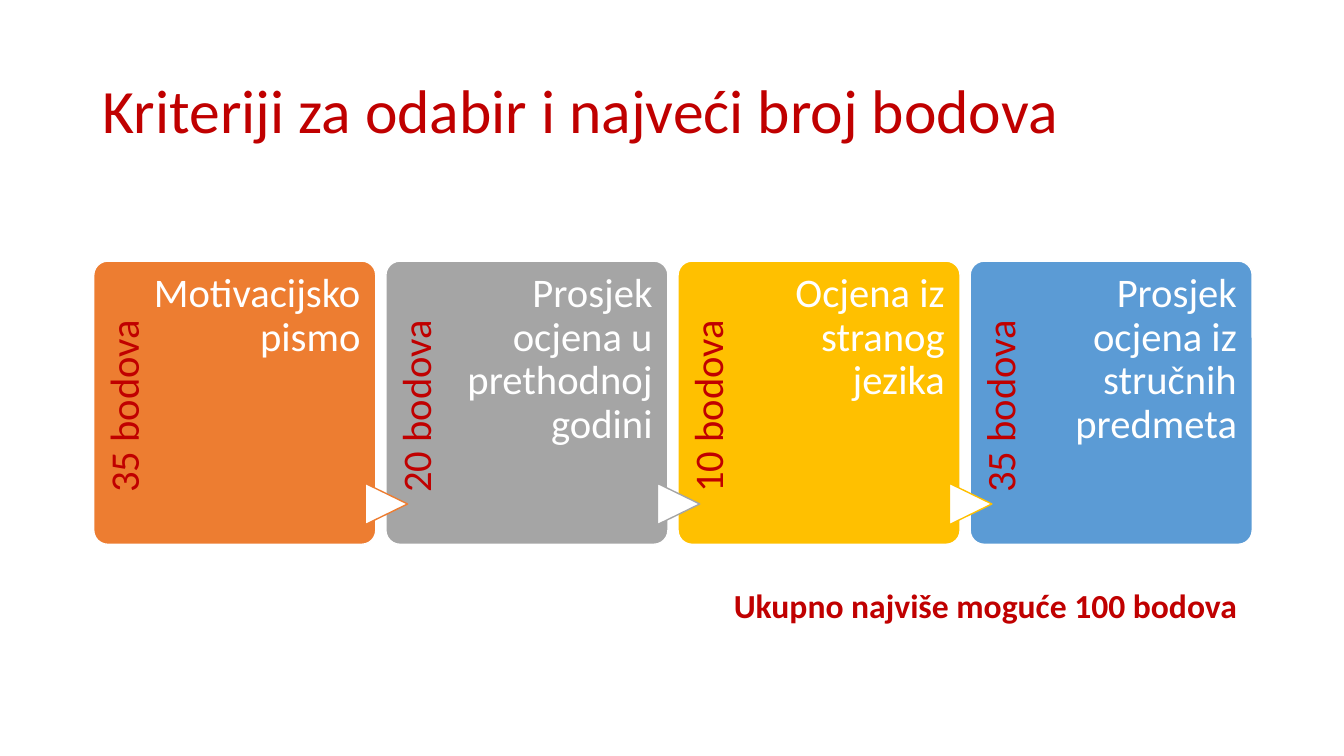
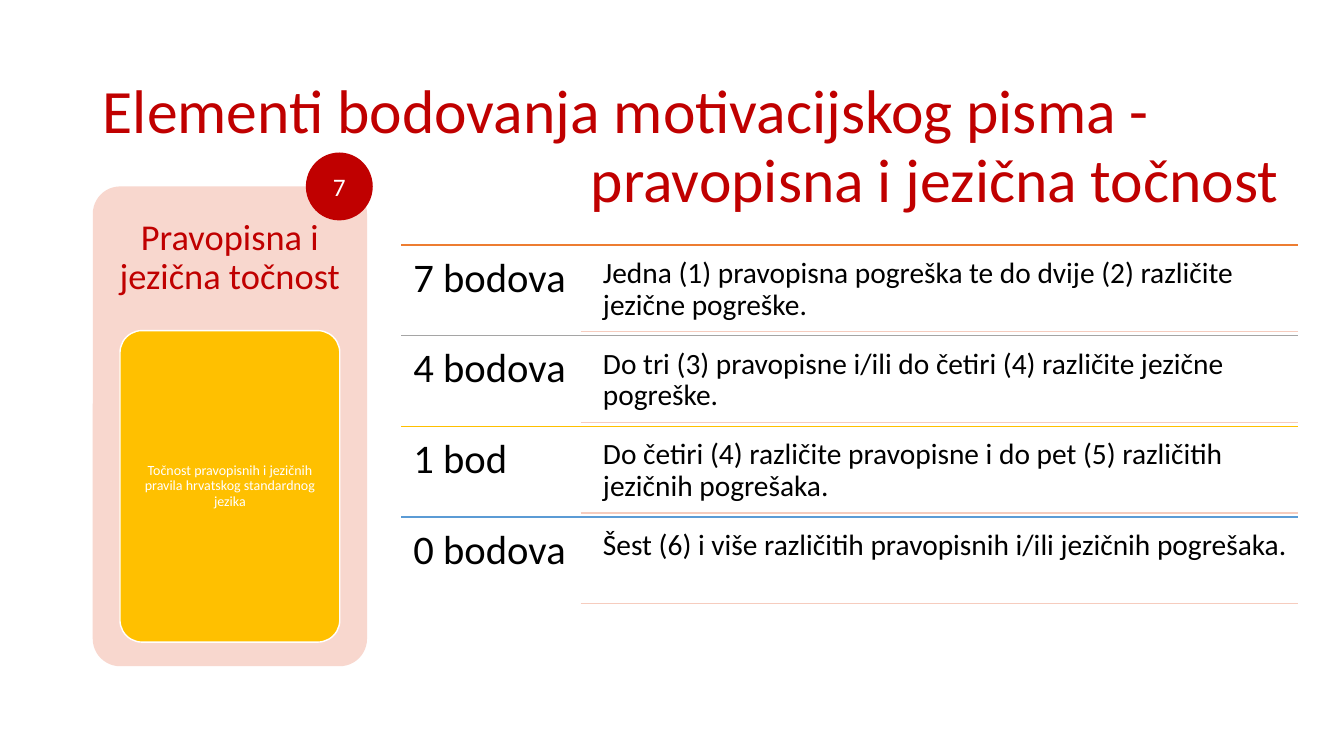
from dataclasses import dataclass

from lxml import etree
from pptx import Presentation
from pptx.dml.color import RGBColor
from pptx.enum.shapes import MSO_CONNECTOR, MSO_SHAPE
from pptx.enum.text import MSO_ANCHOR, MSO_AUTO_SIZE, PP_ALIGN
from pptx.oxml.ns import qn
from pptx.util import Inches, Pt

ROUND = MSO_SHAPE.ROUNDED_RECTANGLE
ARROW = MSO_SHAPE.FLOWCHART_EXTRACT
OVAL = MSO_SHAPE.OVAL
STRAIGHT = MSO_CONNECTOR.STRAIGHT
LEFT, CENTER, RIGHT = PP_ALIGN.LEFT, PP_ALIGN.CENTER, PP_ALIGN.RIGHT
TOP, MIDDLE = MSO_ANCHOR.TOP, MSO_ANCHOR.MIDDLE
FIXED = MSO_AUTO_SIZE.NONE


@dataclass(frozen=True)
class Theme:
    font: str = "Calibri"
    red: str = "C00000"
    white: str = "FFFFFF"
    black: str = "000000"
    panel: str = "F8D7CE"
    rule: str = "F6CCBE"
    accents: tuple = ("ED7D31", "A5A5A5", "FFC000", "5B9BD5")
    title: int = 44
    label: int = 29
    head: int = 26
    total: int = 24
    body: int = 21
    badge: int = 18
    small: int = 10
    line: int = 1
    tight: float = 0.9
    inset: tuple = (0.1, 0.05, 0.1, 0.05)


THEME = Theme()

CARDS = [
    ("35 bodova", "Motivacijsko pismo"),
    ("20 bodova", "Prosjek ocjena u prethodnoj godini"),
    ("10 bodova", "Ocjena iz stranog jezika"),
    ("35 bodova", "Prosjek ocjena iz stručnih predmeta"),
]

LEVELS = [
    ("7 bodova", "Jedna (1) pravopisna pogreška te do dvije (2) različite jezične pogreške."),
    ("4 bodova", "Do tri (3) pravopisne i/ili do četiri (4) različite jezične pogreške."),
    ("1 bod", "Do četiri (4) različite pravopisne i do pet (5) različitih jezičnih pogrešaka."),
    ("0 bodova", "Šest (6) i više različitih pravopisnih i/ili jezičnih pogrešaka."),
]


def to_inches(box):
    return [Inches(side) for side in box]


def paint(hue):
    return RGBColor.from_string(hue)


def set_text(shape, text, size, hue, align=LEFT, anchor=TOP,
             inset=THEME.inset, bold=False, spacing=THEME.tight, wrap=True):
    frame = shape.text_frame
    frame.text = text
    frame.word_wrap = wrap
    frame.auto_size = FIXED
    frame.vertical_anchor = anchor
    (frame.margin_left, frame.margin_top,
     frame.margin_right, frame.margin_bottom) = to_inches(inset)
    para = frame.paragraphs[0]
    para.alignment = align
    para.line_spacing = spacing
    font = para.runs[0].font
    font.name = THEME.font
    font.size = Pt(size)
    font.bold = bold
    font.color.rgb = paint(hue)


def add_text(slide, box, text, size, hue, turn=0, **style):
    shape = slide.shapes.add_textbox(*to_inches(box))
    shape.rotation = turn
    set_text(shape, text, size, hue, **style)


def add_block(slide, kind, box, fill, line=None, adjust=None, turn=0):
    shape = slide.shapes.add_shape(kind, *to_inches(box))
    shape.shadow.inherit = False
    shape.rotation = turn
    shape.fill.solid()
    shape.fill.fore_color.rgb = paint(fill)
    if line:
        shape.line.color.rgb = paint(line)
        shape.line.width = Pt(THEME.line)
    else:
        shape.line.fill.background()
    if adjust is not None:
        shape.adjustments[0] = adjust
    return shape


def add_rule(slide, left, right, top, hue):
    rule = slide.shapes.add_connector(
        STRAIGHT, *to_inches((left, top, right, top)))
    rule.line.color.rgb = paint(hue)
    rule.line.width = Pt(THEME.line)
    etree.SubElement(rule.element.spPr, qn("a:effectLst"))


def add_slide(deck, title):
    slide = deck.slides.add_slide(deck.slide_layouts[5])
    shape = slide.shapes.title
    shape.left, shape.top, shape.width, shape.height = to_inches((0.92, 0.4, 11.5, 1.45))
    set_text(shape, title, THEME.title, THEME.red, anchor=MIDDLE)
    return slide


def draw_card(slide, box, hue, points, name):
    left, top, width, height = box
    add_block(slide, ROUND, box, hue, THEME.white, 0.05)
    add_text(slide, (left - 0.88, top + 0.87, 2.3, 0.56), points,
             THEME.label, THEME.red, turn=270, inset=(0, 0.11, 0.14, 0))
    add_text(slide, (left + 0.56, top, width - 0.71, height), name,
             THEME.label, THEME.white, align=RIGHT, inset=(0, 0.11, 0, 0))


def draw_cards(slide, box):
    left, top, width, height = box
    gap = 0.1
    span = (width - gap * (len(CARDS) - 1)) / len(CARDS)
    step = span + gap
    for index, (points, name) in enumerate(CARDS):
        start = left + index * step
        draw_card(slide, (start, top, span, height),
                  THEME.accents[index], points, name)
        if index:
            add_block(slide, ARROW, (start - 0.2, top + 2.2, 0.41, 0.42),
                      THEME.white, THEME.accents[index - 1], turn=90)


def draw_levels(slide, box):
    left, top, width, height = box
    right = left + width
    split = left + 1.78
    step = height / len(LEVELS)
    pad = 0.04
    for index, (points, rule) in enumerate(LEVELS):
        start = top + index * step
        add_rule(slide, left, right, start, THEME.accents[index])
        add_text(slide, (left, start, split - left, step), points,
                 THEME.label, THEME.black, inset=(0.12,) * 4)
        add_text(slide, (split + 0.13, start + pad, right - split - 0.13, step - 2 * pad),
                 rule, THEME.body, THEME.black, inset=(0.09,) * 4)
        add_rule(slide, split, right, start + step - pad, THEME.rule)


def draw_panel(slide, box):
    left, top, width, height = box
    head = 1.43
    side = 0.27
    add_block(slide, ROUND, box, THEME.panel, adjust=0.1)
    add_text(slide, (left, top, width, head), "Pravopisna i jezična točnost",
             THEME.head, THEME.red, align=CENTER, anchor=MIDDLE, inset=(0.11,) * 4)
    note = add_block(slide, ROUND,
                     (left + side, top + head, width - 2 * side, 3.09),
                     THEME.accents[2], THEME.white, 0.1)
    set_text(note, "Točnost pravopisnih i jezičnih pravila hrvatskog standardnog jezika",
             THEME.small, THEME.white, align=CENTER, anchor=MIDDLE,
             inset=(0.03, 0.02, 0.03, 0.02))
    badge = add_block(slide, OVAL, (left + 2.12, top - 0.33, 0.65, 0.66),
                      THEME.red, THEME.red)
    set_text(badge, "7", THEME.badge, THEME.white, align=CENTER,
             anchor=MIDDLE, spacing=1.0)


def build_choice(deck):
    slide = add_slide(deck, "Kriteriji za odabir i najveći broj bodova")
    draw_cards(slide, (0.93, 2.59, 11.49, 2.81))
    add_text(slide, (7.18, 5.75, 5.24, 0.5), "Ukupno najviše moguće 100 bodova",
             THEME.total, THEME.red, bold=True, spacing=1.0, wrap=False)


def build_scores(deck):
    slide = add_slide(deck, "Elementi bodovanja motivacijskog pisma -")
    draw_levels(slide, (3.98, 2.43, 8.89, 3.6))
    draw_panel(slide, (0.92, 1.85, 2.72, 4.76))
    add_text(slide, (5.76, 1.39, 7.49, 0.85), "pravopisna i jezična točnost",
             THEME.title, THEME.red, anchor=MIDDLE)


def main():
    deck = Presentation()
    deck.slide_width, deck.slide_height = to_inches((13.33, 7.5))
    build_choice(deck)
    build_scores(deck)
    deck.save("out.pptx")


if __name__ == "__main__":
    main()
